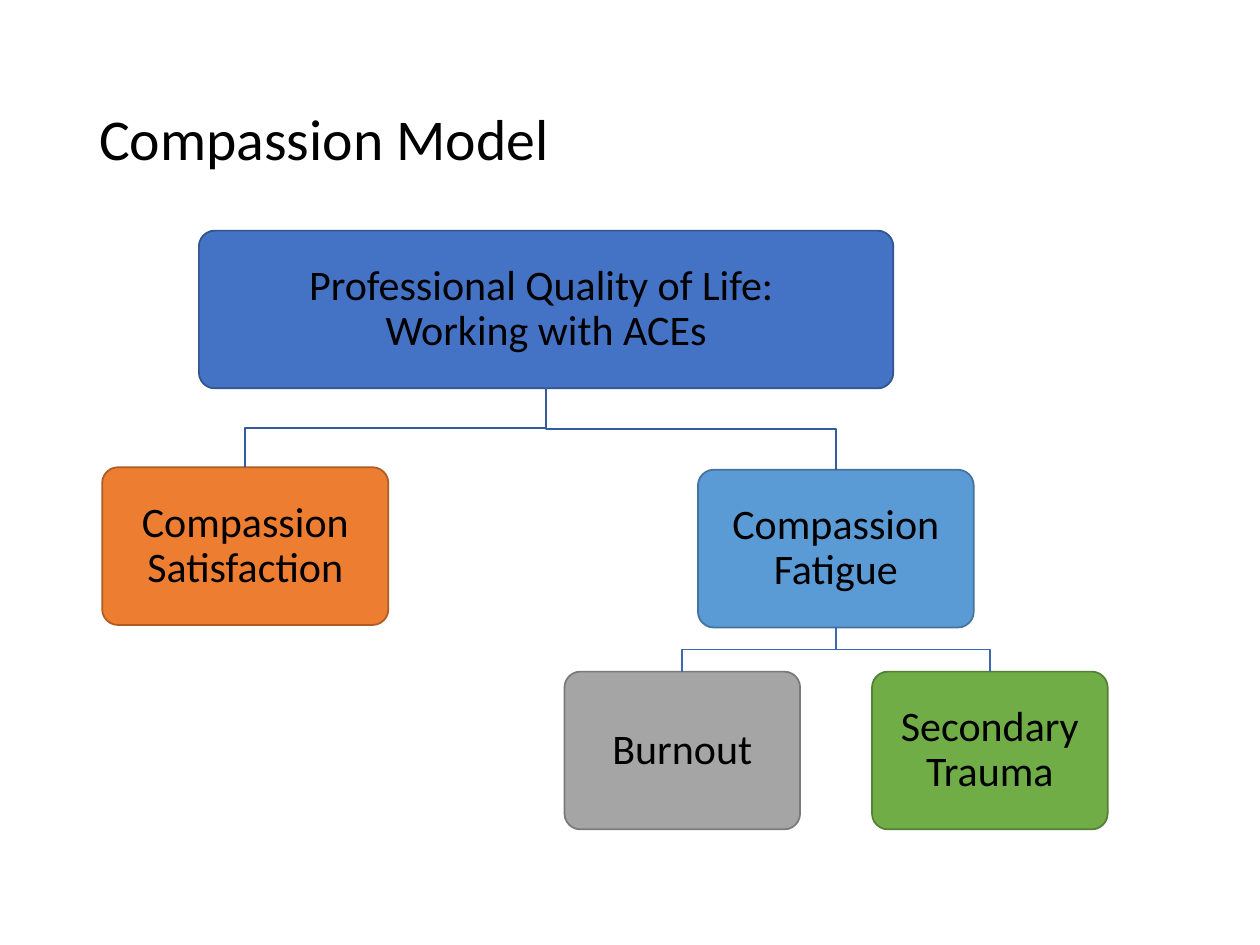
from pptx import Presentation
from pptx.dml.color import RGBColor
from pptx.enum.shapes import MSO_SHAPE as Shape
from pptx.enum.text import MSO_ANCHOR as Anchor, PP_ALIGN as Align
from pptx.util import Cm, Pt

FONT = "Calibri"
BOX_HEIGHT = Cm(3.18)
COLORS = {
    "text": "000000",
    "blue": "4472C4", "blue_edge": "325491",
    "orange": "ED7D31", "orange_edge": "AF5C24",
    "sky": "5B9BD5", "sky_edge": "43739E",
    "gray": "A5A5A5", "gray_edge": "7A7A7A",
    "green": "70AD47", "green_edge": "538035",
    "upper_branch": "365B9D", "lower_branch": "3E67B2",
}

# Key: text, left, top, width (cm), color
BOXES = {
    "quality": ("Professional Quality of Life: \vWorking with ACEs", 4.01, 4.65, 14, "blue"),
    "satisfaction": ("Compassion Satisfaction", 2.06, 9.42, 5.77, "orange"),
    "fatigue": ("Compassion Fatigue", 14.07, 9.47, 5.56, "sky"),
    "burnout": ("Burnout", 11.38, 13.54, 4.75, "gray"),
    "trauma": ("Secondary Trauma", 17.58, 13.54, 4.75, "green"),
}

# Parent, child, line color
BRANCHES = [
    ("quality", "satisfaction", "upper_branch"),
    ("quality", "fatigue", "upper_branch"),
    ("fatigue", "burnout", "lower_branch"),
    ("fatigue", "trauma", "lower_branch"),
]


def color(name):
    return RGBColor.from_string(COLORS[name])


def set_text(shape, text, size, align):
    frame = shape.text_frame
    frame.word_wrap = True
    frame.vertical_anchor = Anchor.MIDDLE
    paragraph = frame.paragraphs[0]
    paragraph.text = text
    paragraph.alignment = align
    paragraph.line_spacing = 0.9
    paragraph.font.name = FONT
    paragraph.font.size = Pt(size)
    paragraph.font.color.rgb = color("text")


def set_line(shape, name):
    shape.shadow.inherit = False
    shape.line.color.rgb = color(name)
    shape.line.width = Pt(1)


def add_title(slide, text):
    title = slide.shapes.add_textbox(Cm(1.75), Cm(1.02), Cm(21.9), Cm(3.68))
    set_text(title, text, 33, Align.LEFT)


def add_box(slide, text, left, top, width, fill):
    box = slide.shapes.add_shape(
        Shape.ROUNDED_RECTANGLE, Cm(left), Cm(top), Cm(width), BOX_HEIGHT)
    box.adjustments[0] = 0.1
    box.fill.solid()
    box.fill.fore_color.rgb = color(fill)
    set_line(box, f"{fill}_edge")
    frame = box.text_frame
    frame.margin_left = frame.margin_right = Cm(0.25)
    frame.margin_top = frame.margin_bottom = Cm(0.25)
    set_text(box, text, 24, Align.CENTER)
    return box


def add_branch(slide, parent, child, line):
    """Draw an elbow from the parent's bottom to the child's top."""
    start_x = parent.left + parent.width // 2
    start_y = parent.top + parent.height
    end_x = child.left + child.width // 2
    middle_y = (start_y + child.top) // 2
    builder = slide.shapes.build_freeform(start_x, start_y)
    builder.add_line_segments(
        [(start_x, middle_y), (end_x, middle_y), (end_x, child.top)], close=False)
    branch = builder.convert_to_shape()
    branch.fill.background()
    set_line(branch, line)


def main():
    presentation = Presentation()
    presentation.slide_width, presentation.slide_height = Cm(25.4), Cm(19.05)
    slide = presentation.slides.add_slide(presentation.slide_layouts[6])

    # Title
    add_title(slide, "Compassion Model")

    # Hierarchy
    boxes = {key: add_box(slide, *box) for key, box in BOXES.items()}
    for parent, child, line in BRANCHES:
        add_branch(slide, boxes[parent], boxes[child], line)

    presentation.save("out.pptx")


if __name__ == "__main__":
    main()
